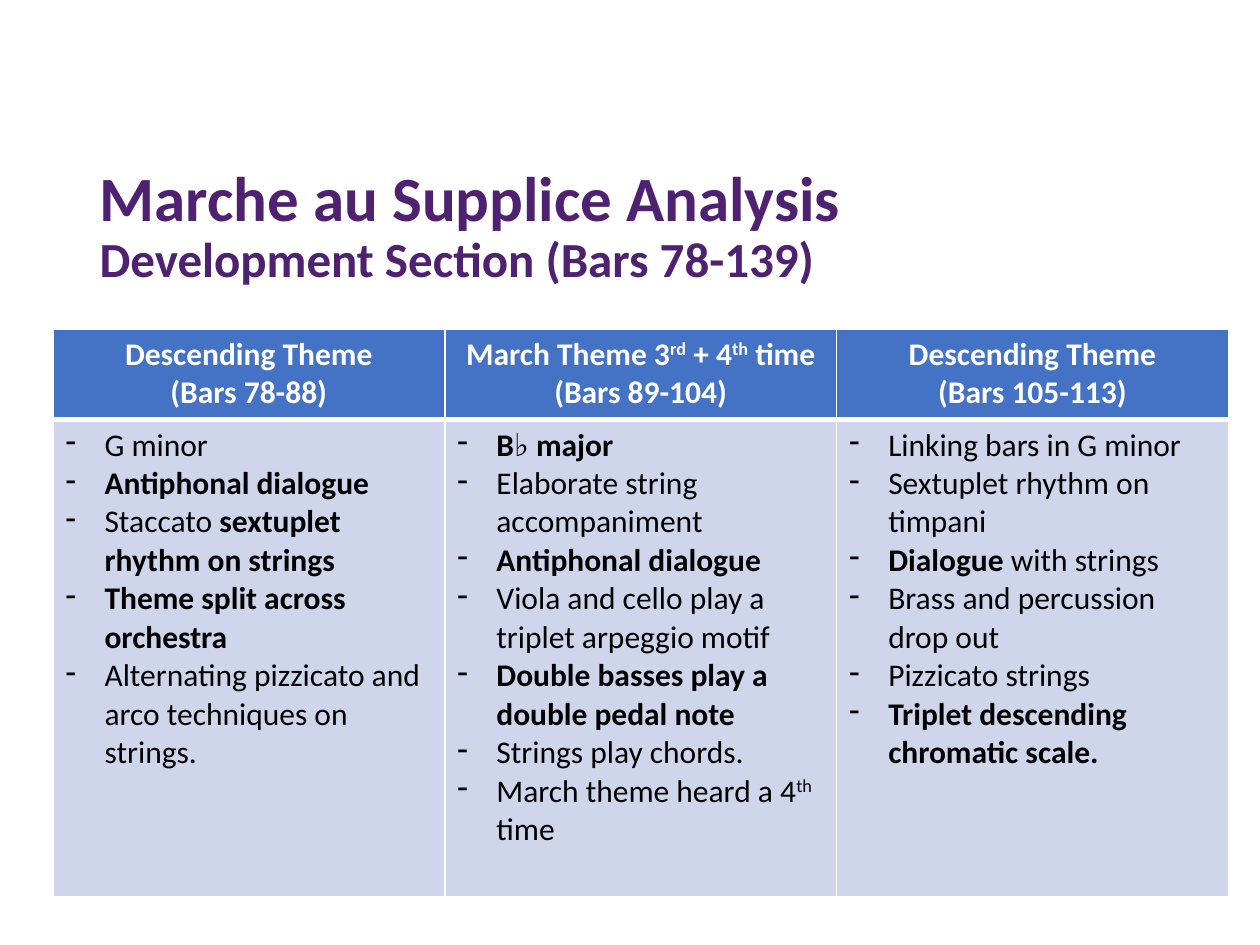
from dataclasses import dataclass

from lxml import etree
from pptx import Presentation
from pptx.dml.color import RGBColor
from pptx.enum.text import MSO_ANCHOR, PP_ALIGN
from pptx.oxml.ns import qn
from pptx.util import Emu, Inches, Pt

MIDDLE = MSO_ANCHOR.MIDDLE
LEFT, CENTER = PP_ALIGN.LEFT, PP_ALIGN.CENTER
TITLE_ONLY = 5
PLAIN, BOLD, SUPER, BOLD_SUPER = "", "b", "s", "bs"


@dataclass(frozen=True)
class Theme:
    font: str = "Calibri"
    title: str = "4F2171"
    header: str = "4472C4"
    body: str = "CFD5EA"
    light: str = "FFFFFF"
    dark: str = "000000"
    title_size: int = 36
    subtitle_size: int = 28
    cell_size: int = 18
    thin: int = 1
    thick: int = 3


THEME = Theme()

TITLE = "Marche au Supplice Analysis"
SUBTITLE = "Development Section (Bars 78-139)"

# Each column: header paragraphs, then bullets; a paragraph is a list of runs
COLUMNS = [
    ([[("Descending Theme", BOLD)], [("(Bars 78-88)", BOLD)]],
     [[("G minor", PLAIN)],
      [("Antiphonal dialogue", BOLD)],
      [("Staccato", PLAIN), (" sextuplet rhythm on strings", BOLD)],
      [("Theme split across orchestra", BOLD)],
      [("Alternating pizzicato and arco techniques on strings.", PLAIN)]]),
    ([[("March Theme 3", BOLD), ("rd", BOLD_SUPER), (" + 4", BOLD),
       ("th", BOLD_SUPER), (" time", BOLD)],
      [("(Bars 89-104)", BOLD)]],
     [[("B♭ major", BOLD)],
      [("Elaborate string accompaniment", PLAIN)],
      [("Antiphonal dialogue", BOLD)],
      [("Viola and cello play a triplet arpeggio motif", PLAIN)],
      [("Double basses play a double pedal note", BOLD)],
      [("Strings play chords.", PLAIN)],
      [("March theme heard a 4", PLAIN), ("th", SUPER), (" time", PLAIN)]]),
    ([[("Descending Theme", BOLD)], [("(Bars 105-113)", BOLD)]],
     [[("Linking bars in G minor", PLAIN)],
      [("Sextuplet rhythm on timpani", PLAIN)],
      [("Dialogue", BOLD), (" with strings", PLAIN)],
      [("Brass and percussion drop out", PLAIN)],
      [("Pizzicato strings", PLAIN)],
      [("Triplet descending chromatic scale.", BOLD)]]),
]


def add_run(p, text, size, color, style):
    r = p.add_run()
    r.text = text
    r.font.name = THEME.font
    r.font.size = Pt(size)
    r.font.color.rgb = RGBColor.from_string(color)
    r.font.bold = "b" in style
    if "s" in style:
        r.font._element.set("baseline", "30000")


def set_dash_bullet(p):
    indent = Inches(0.31)
    pPr = p._p.get_or_add_pPr()
    pPr.set("marL", str(indent))
    pPr.set("indent", str(-indent))
    etree.SubElement(pPr, qn("a:buFontTx"))
    etree.SubElement(pPr, qn("a:buChar")).set("char", "-")


def set_borders(cell, top, bottom):
    tcPr = cell._tc.get_or_add_tcPr()
    widths = {"L": THEME.thin, "R": THEME.thin, "T": top, "B": bottom}
    for i, (side, width) in enumerate(widths.items()):
        ln = etree.Element(qn(f"a:ln{side}"))
        ln.set("w", str(Pt(width)))
        fill = etree.SubElement(ln, qn("a:solidFill"))
        etree.SubElement(fill, qn("a:srgbClr")).set("val", THEME.light)
        tcPr.insert(i, ln)


def fill_cell(cell, paragraphs, fill, color, align, bullets):
    cell.fill.solid()
    cell.fill.fore_color.rgb = RGBColor.from_string(fill)
    tf = cell.text_frame
    for i, runs in enumerate(paragraphs):
        p = tf.add_paragraph() if i else tf.paragraphs[0]
        p.alignment = align
        if bullets:
            set_dash_bullet(p)
        for text, style in runs:
            add_run(p, text, THEME.cell_size, color, style)


def place_title(s, box):
    title = s.shapes.title
    title.left, title.top, title.width, title.height = box
    tf = title.text_frame
    tf.word_wrap = True
    tf.vertical_anchor = MIDDLE
    p = tf.paragraphs[0]
    p.alignment = LEFT
    p.line_spacing = 0.9
    add_run(p, TITLE, THEME.title_size, THEME.title, BOLD)
    p.add_line_break()
    add_run(p, SUBTITLE, THEME.subtitle_size, THEME.title, BOLD)


def place_theme_table(s, box, header_share):
    table = s.shapes.add_table(2, len(COLUMNS), *box).table
    height = box[3]
    table.rows[0].height = Emu(int(height * header_share))
    table.rows[1].height = height - table.rows[0].height
    for col, (header, bullets) in enumerate(COLUMNS):
        top, bottom = table.cell(0, col), table.cell(1, col)
        fill_cell(top, header, THEME.header, THEME.light, CENTER, False)
        set_borders(top, THEME.thin, THEME.thick)
        fill_cell(bottom, bullets, THEME.body, THEME.dark, LEFT, True)
        set_borders(bottom, THEME.thick, THEME.thin)


def main():
    prs = Presentation()
    prs.slide_width, prs.slide_height = Inches(10), Inches(7.5)
    s = prs.slides.add_slide(prs.slide_layouts[TITLE_ONLY])

    # Title with its subtitle line
    place_title(s, [Inches(v) for v in (0.69, 1.08, 8.62, 1.45)])

    # One column per theme
    place_theme_table(s, [Inches(v) for v in (0.42, 2.61, 9.33, 4.51)], 0.16)

    prs.save("out.pptx")


if __name__ == "__main__":
    main()
